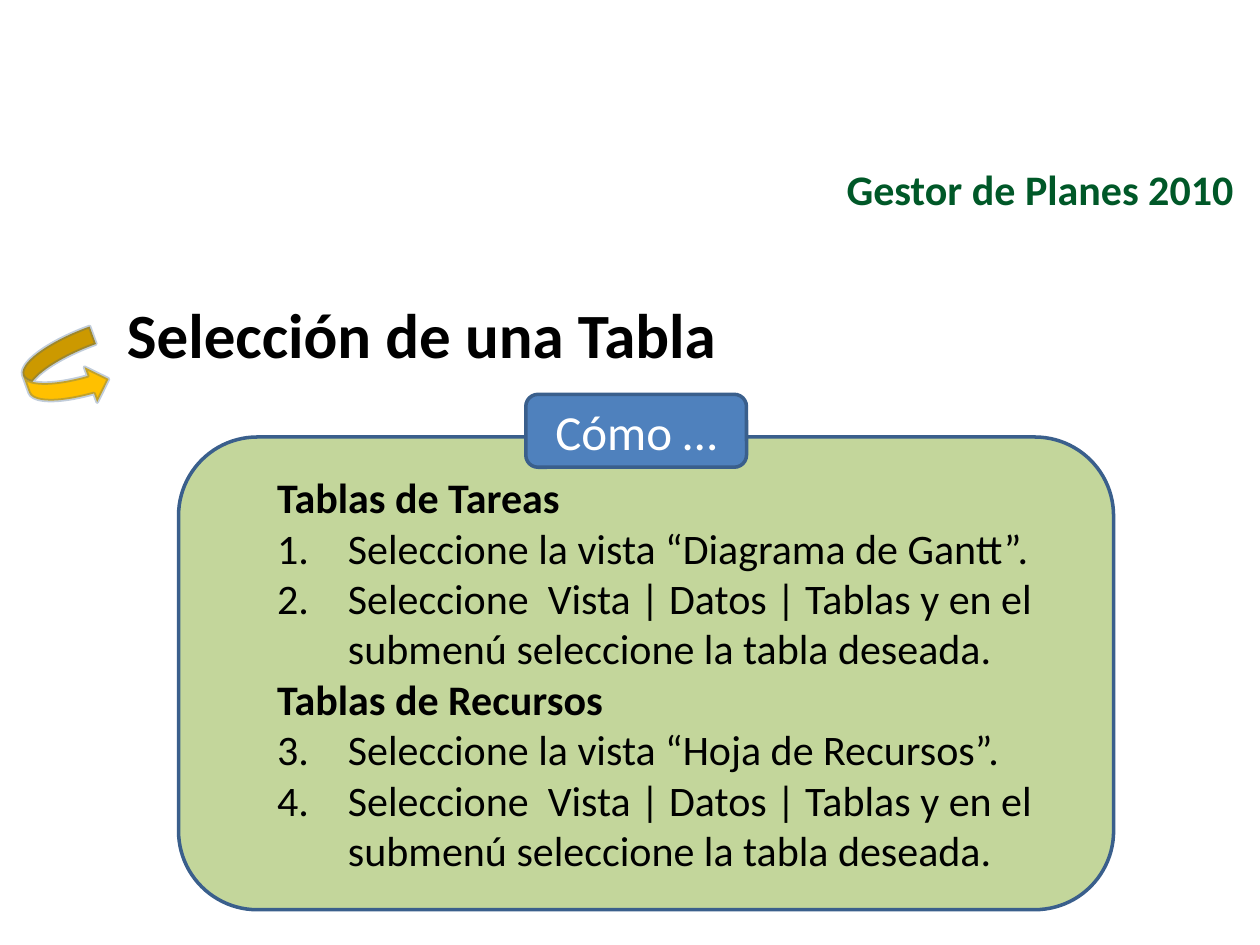
from lxml import etree
from pptx import Presentation
from pptx.dml.color import RGBColor
from pptx.enum.shapes import MSO_SHAPE
from pptx.enum.text import MSO_ANCHOR, PP_ALIGN
from pptx.oxml.ns import qn
from pptx.util import Cm, Pt

ROUND = MSO_SHAPE.ROUNDED_RECTANGLE
ARROW = MSO_SHAPE.CURVED_RIGHT_ARROW
TOP, MIDDLE = MSO_ANCHOR.TOP, MSO_ANCHOR.MIDDLE
LEFT, CENTER, RIGHT = PP_ALIGN.LEFT, PP_ALIGN.CENTER, PP_ALIGN.RIGHT
EDGE = "3A5F8C"
STEP = "Seleccione  Vista | Datos | Tablas y en el submenú seleccione la tabla deseada."
PARTS = [
    ("Tablas de Tareas", ["Seleccione la vista “Diagrama de Gantt”.", STEP]),
    ("Tablas de Recursos", ["Seleccione la vista “Hoja de Recursos”.", STEP]),
]


def tint(color, code):
    """Set a colour from a hex string."""
    color.rgb = RGBColor.from_string(code)


def style(item, values):
    """Set each attribute named in a dict."""
    for name, value in values.items():
        setattr(item, name, value)


def place(item, left, top, width, height):
    """Move and size an item, in centimetres."""
    style(item, {"left": Cm(left), "top": Cm(top),
                 "width": Cm(width), "height": Cm(height)})


def write(para, text, size, code="000000", bold=False, align=LEFT):
    """Put formatted text in a paragraph."""
    para.text = text
    para.alignment = align
    style(para.font, {"name": "Calibri", "size": Pt(size), "bold": bold})
    tint(para.font.color, code)


def frame(item, anchor):
    """Wrap the text of an item, anchor it and return its frame."""
    style(item.text_frame, {"word_wrap": True, "vertical_anchor": anchor})
    return item.text_frame


def shape(shapes, kind, box, fill):
    """Add a filled and outlined shape."""
    item = shapes.add_shape(kind, *map(Cm, box))
    item.shadow.inherit = False
    item.fill.solid()
    tint(item.fill.fore_color, fill)
    tint(item.line.color, EDGE)
    item.line.width = Pt(2)
    return item


def indent(para, left, hang, start=None):
    """Set the indents of a paragraph and number it from start."""
    props = para._p.get_or_add_pPr()
    props.set("marL", str(Cm(left)))
    props.set("indent", str(Cm(hang)))
    if start:
        etree.SubElement(props, qn("a:buFont"), typeface="+mj-lt")
        etree.SubElement(props, qn("a:buAutoNum"), type="arabicPeriod",
                         startAt=str(start))


def steps(body):
    """Write the headed lists, numbered on from part to part."""
    start, para = 1, body.paragraphs[0]
    for head, lines in PARTS:
        if start > 1:
            para = body.add_paragraph()
        para.level = 1
        indent(para, 2.7, -1.43)
        write(para, head, 24, bold=True)
        for line in lines:
            para = body.add_paragraph()
            para.level = 1
            indent(para, 2.7, -1.43, start)
            write(para, line, 24)
        start += len(lines)


def panel(slide):
    """Add the panel of steps with its label."""
    group = slide.shapes.add_group_shape().shapes
    card = shape(group, ROUND, (3.6, 8.81, 18.85, 9.53), "C3D69B")
    steps(frame(card, MIDDLE))
    label = shape(group, ROUND, (10.6, 7.95, 4.45, 1.47), "4F81BD")
    write(frame(label, MIDDLE).paragraphs[0], "Cómo …", 28, "FFFFFF", align=CENTER)


def arrow(slide):
    """Add the turned arrow with its faint outline."""
    item = shape(slide.shapes, ARROW, (0.51, 6.81, 1.6, 1.5), "FFC000")
    item.rotation = 340.1
    color = item.line._ln.find(".//" + qn("a:srgbClr"))
    etree.SubElement(color, qn("a:alpha"), val="31000")


def main():
    """Build and save the slide."""
    deck = Presentation()
    style(deck, {"slide_width": Cm(25.4), "slide_height": Cm(19.05)})
    slide = deck.slides.add_slide(deck.slide_layouts[5])
    title = slide.shapes.title
    place(title, 13.69, 2.92, 11.43, 1.75)
    write(frame(title, MIDDLE).paragraphs[0], "Gestor de Planes 2010", 24,
          "005828", True, RIGHT)
    topic = slide.shapes.add_textbox(0, 0, 0, 0)
    place(topic, 2.31, 5.84, 24.33, 13.64)
    para = frame(topic, TOP).paragraphs[0]
    indent(para, 0.97, -0.97)
    para.space_after = Pt(6)
    write(para, "Selección de una Tabla", 36, bold=True)
    panel(slide)
    arrow(slide)
    deck.save("out.pptx")


if __name__ == "__main__":
    main()
